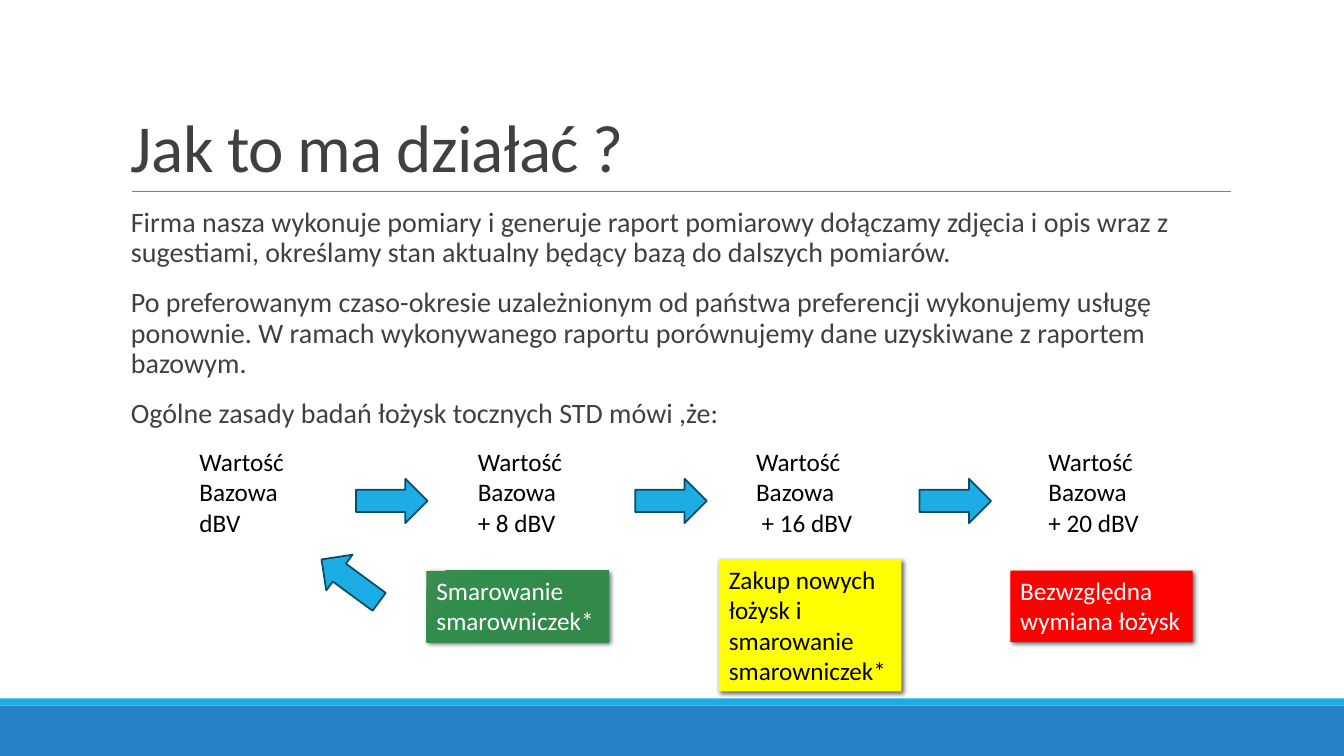
from dataclasses import dataclass

from pptx import Presentation
from pptx.dml.color import RGBColor
from pptx.enum.shapes import MSO_CONNECTOR, MSO_SHAPE
from pptx.enum.text import MSO_ANCHOR
from pptx.oxml import parse_xml
from pptx.oxml.ns import qn
from pptx.util import Emu, Pt

EMU_PER_PX = 9144
NAMESPACE = 'xmlns:a="http://schemas.openxmlformats.org/drawingml/2006/main"'


@dataclass(frozen=True)
class Theme:
    """Colours, font and type sizes of the slide."""
    font: str = "Calibri"
    title_size: int = 48
    body_size: int = 20
    label_size: int = 18
    text: str = "404040"
    black: str = "000000"
    white: str = "FFFFFF"
    rule: str = "808080"
    footer: str = "2683C6"
    accent: str = "1CADE4"
    arrow_edge: str = "0C4C64"
    green: tuple = ((0, "2F8949"), (34, "32894A"), (70, "318D4B"), (100, "3A8C51"))
    yellow: str = "FFFF00"
    red: str = "FF0000"


THEME = Theme()


def px(*lengths):
    """Turn pixel lengths into EMU."""
    return [Emu(length * EMU_PER_PX) for length in lengths]


def write_text(shape, paragraphs, *, size, color, anchor=MSO_ANCHOR.TOP,
               insets=(10, 5, 10, 5), line_spacing=1.0, gap=0, tracking=0):
    """Fill a shape with formatted paragraphs."""
    frame = shape.text_frame
    frame.word_wrap = True
    frame.vertical_anchor = anchor
    (frame.margin_left, frame.margin_top,
     frame.margin_right, frame.margin_bottom) = px(*insets)
    for index, text in enumerate(paragraphs):
        paragraph = frame.add_paragraph() if index else frame.paragraphs[0]
        paragraph.text = text
        paragraph.line_spacing = line_spacing
        paragraph.space_before = Pt(gap if index else 0)
        for run in paragraph.runs:
            run.font.name = THEME.font
            run.font.size = Pt(size)
            run.font.color.rgb = RGBColor.from_string(color)
            if tracking:
                run.font._element.set("spc", str(tracking))


def add_text(slide, box, paragraphs, **text_format):
    """Add a text box with formatted paragraphs."""
    write_text(slide.shapes.add_textbox(*px(*box)), paragraphs, **text_format)


def add_block(slide, kind, box, fill, edge=None):
    """Add a preset shape with a plain fill and an optional outline."""
    shape = slide.shapes.add_shape(kind, *px(*box))
    shape.shadow.inherit = False
    shape.fill.solid()
    shape.fill.fore_color.rgb = RGBColor.from_string(fill)
    if edge:
        shape.line.color.rgb = RGBColor.from_string(edge)
        shape.line.width = Pt(1.25)
    else:
        shape.line.fill.background()
    return shape


def add_arrow(slide, left, top, rotation=0):
    """Add a block arrow."""
    arrow = add_block(slide, MSO_SHAPE.RIGHT_ARROW, (left, top, 71, 44),
                      THEME.accent, THEME.arrow_edge)
    arrow.rotation = rotation


def set_radial_fill(shape, stops):
    """Replace the plain fill of a shape with a radial gradient."""
    stop_xml = "".join(
        f'<a:gs pos="{position * 1000}"><a:srgbClr val="{color}"/></a:gs>'
        for position, color in stops)
    gradient = parse_xml(
        f'<a:gradFill {NAMESPACE} rotWithShape="1"><a:gsLst>{stop_xml}</a:gsLst>'
        '<a:path path="circle"><a:fillToRect l="100000" t="100000"/></a:path>'
        '</a:gradFill>')
    properties = shape._element.spPr
    properties.replace(properties.find(qn("a:solidFill")), gradient)


def add_action(slide, box, text, fill, color):
    """Add a shadowed card naming the action to take."""
    is_gradient = isinstance(fill, tuple)
    card = add_block(slide, MSO_SHAPE.RECTANGLE, box, fill[0][1] if is_gradient else fill)
    if is_gradient:
        set_radial_fill(card, fill)
    card._element.spPr.find(qn("a:effectLst")).append(parse_xml(
        f'<a:outerShdw {NAMESPACE} blurRad="{Pt(3.5)}" dist="{Pt(2)}" dir="2700000">'
        f'<a:srgbClr val="{THEME.black}"><a:alpha val="60000"/></a:srgbClr></a:outerShdw>'))
    write_text(card, [text], size=THEME.label_size, color=color)
    card.text_frame.paragraphs[0].alignment = 1


def add_rule(slide, left, right, top):
    """Add the thin line under the title."""
    rule = slide.shapes.add_connector(MSO_CONNECTOR.STRAIGHT, *px(left, top, right, top))
    rule.line.color.rgb = RGBColor.from_string(THEME.rule)
    rule.line.width = Pt(0.5)
    rule._element.spPr.append(parse_xml(f"<a:effectLst {NAMESPACE}/>"))


def main():
    """Build and save the slide."""
    presentation = Presentation()
    presentation.slide_width, presentation.slide_height = px(1333, 750)
    slide = presentation.slides.add_slide(presentation.slide_layouts[6])

    add_block(slide, MSO_SHAPE.RECTANGLE, (0, 700, 1333, 50), THEME.footer)
    add_block(slide, MSO_SHAPE.RECTANGLE, (0, 693, 1333, 7), THEME.accent)
    add_rule(slide, 131, 1221, 190)
    add_text(slide, (120, 31, 1100, 159), ["Jak to ma działać ?"],
             size=THEME.title_size, color=THEME.text, anchor=MSO_ANCHOR.BOTTOM,
             line_spacing=0.85, tracking=-50)
    add_text(slide, (120, 202, 1100, 236), [
        "Firma nasza wykonuje pomiary i generuje raport pomiarowy dołączamy zdjęcia "
        "i opis wraz z sugestiami, określamy stan aktualny będący bazą do dalszych pomiarów.",
        "Po preferowanym czaso-okresie uzależnionym od państwa preferencji wykonujemy "
        "usługę ponownie. W ramach wykonywanego raportu porównujemy dane uzyskiwane "
        "z raportem bazowym.",
        "Ogólne zasady badań łożysk tocznych STD mówi ,że:",
    ], size=THEME.body_size, color=THEME.text, insets=(10, 5, 0, 5),
        line_spacing=0.9, gap=14)

    levels = ((188, "dBV"), (464, "+ 8 dBV"), (740, " + 16 dBV"), (1030, "+ 20 dBV"))
    for left, level in levels:
        add_text(slide, (left, 438, 125, 101), ["Wartość\vBazowa", level],
                 size=THEME.label_size, color=THEME.black)

    actions = (
        ((423, 566, 181, 71), "Smarowanie smarowniczek*", THEME.green, THEME.white),
        ((713, 555, 181, 131), "Zakup nowych łożysk i smarowanie smarowniczek*",
         THEME.yellow, THEME.black),
        ((1002, 566, 181, 71), "Bezwzględna wymiana łożysk", THEME.red, THEME.white),
    )
    for action in actions:
        add_action(slide, *action)

    for left in (353, 630, 912):
        add_arrow(slide, left, 475)
    add_arrow(slide, 312, 554, rotation=216.3)

    presentation.save("out.pptx")


if __name__ == "__main__":
    main()
